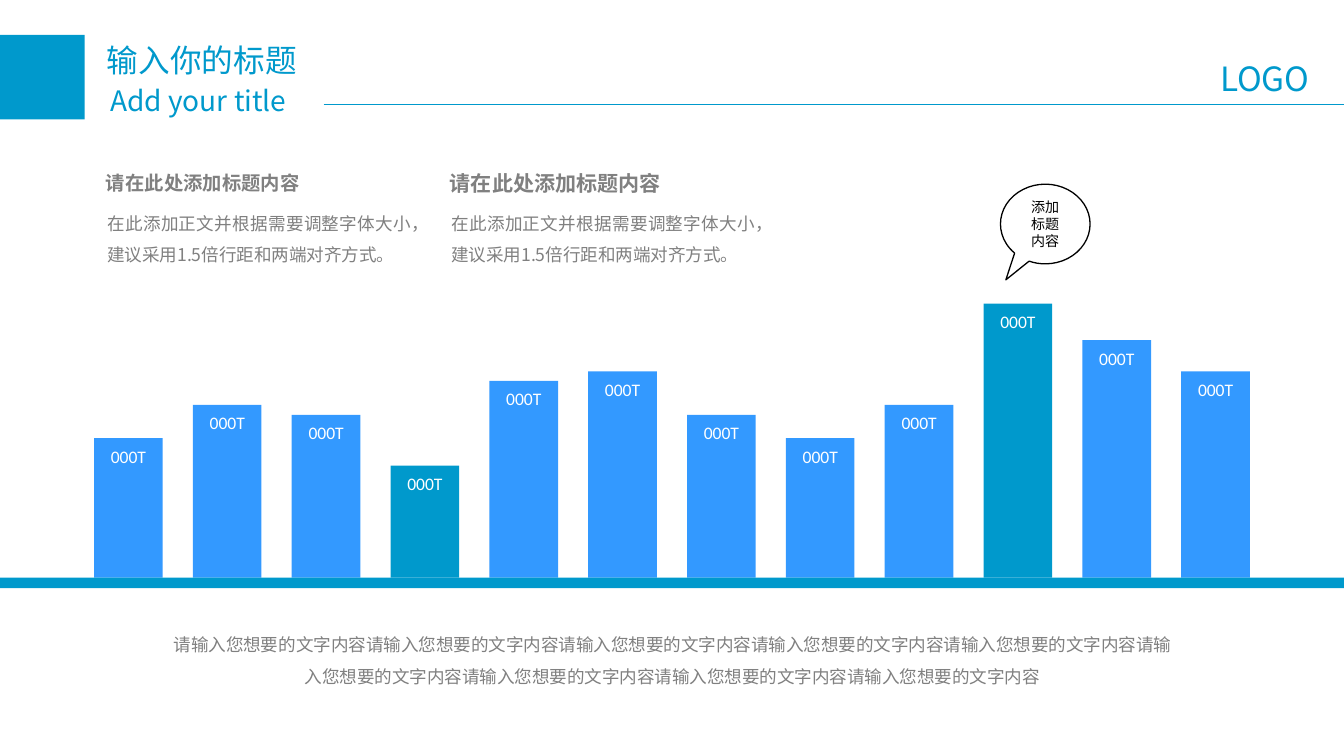
from lxml import etree
from pptx import Presentation
from pptx.dml.color import RGBColor
from pptx.enum import shapes, text
from pptx.oxml.ns import qn
from pptx.util import Cm, Pt

TEAL = RGBColor(0x00, 0x99, 0xCC)
BLUE = RGBColor(0x33, 0x99, 0xFF)
GREY = RGBColor(0x80, 0x80, 0x80)
WHITE = RGBColor(0xFF, 0xFF, 0xFF)
BLACK = RGBColor(0, 0, 0)
CJK = "Noto Sans CJK SC"
WIDTH, HEIGHT = 27, 15
BAR_HEIGHTS = [2.8, 3.47, 3.27, 2.25, 3.95, 4.14, 3.27, 2.8, 3.47, 5.5, 4.77, 4.14]
HIGHLIGHTS = (3, 9)
HEADING = "请在此处添加标题内容"
BODY = "在此添加正文并根据需要调整字体大小，建议采用1.5倍行距和两端对齐方式。"


def write(tf, words, size, color, font=CJK, bold=False, align=None,
          spacing=None, insets=(0.25, 0.13, 0.25, 0.13), wrap=True):
    tf.word_wrap = wrap
    tf.margin_left, tf.margin_top, tf.margin_right, tf.margin_bottom = map(Cm, insets)
    tf.text = words
    p = tf.paragraphs[0]
    p.alignment = align
    p.line_spacing = spacing
    r = p.runs[0]
    r.font.size = Pt(size)
    r.font.bold = bold
    r.font.name = font
    r.font.color.rgb = color
    etree.SubElement(r.font._element, qn("a:ea"), typeface=CJK)


def add_text(s, x, y, w, h, words, size, color, **style):
    tb = s.shapes.add_textbox(Cm(x), Cm(y), Cm(w), Cm(h))
    write(tb.text_frame, words, size, color, **style)


def add_block(s, x, y, w, h, color, kind=shapes.MSO_SHAPE.RECTANGLE):
    sp = s.shapes.add_shape(kind, Cm(x), Cm(y), Cm(w), Cm(h))
    sp.shadow.inherit = False
    sp.fill.solid()
    sp.fill.fore_color.rgb = color
    sp.line.fill.background()
    return sp


def add_header(s, x, y, w):
    add_block(s, x, y, 1.7, 1.7, TEAL)
    add_text(s, x + 1.9, y, 4.4, 1.02, "输入你的标题", 18, TEAL)
    add_text(s, x + 1.97, y + 0.84, 4.4, 0.94, "Add your title", 16, TEAL)
    line = s.shapes.add_connector(shapes.MSO_CONNECTOR.STRAIGHT,
                                  Cm(x + 6.5), Cm(y + 1.4), Cm(x + w), Cm(y + 1.4))
    line.line.color.rgb = TEAL
    line.line.width = Pt(0.75)
    etree.SubElement(line._element.spPr, qn("a:effectLst"))
    add_text(s, x + w - 2.74, y + 0.34, 2.44, 1.07, "LOGO", 19, TEAL, wrap=False)


def add_column(s, x, y, w, size, font):
    add_text(s, x, y, w, 0.7, HEADING, size, GREY, font=font, bold=True,
             insets=(0.2, 0.1, 0.2, 0.1))
    add_text(s, x + 0.23, y + 0.63, w - 0.25, 2.1, BODY, 10, GREY,
             align=text.PP_ALIGN.JUSTIFY, spacing=1.5, insets=(0, 0.1, 0, 0.1))


def add_bars(s, x, base, w, bar_width):
    pitch = (w - bar_width) / (len(BAR_HEIGHTS) - 1)
    for i, height in enumerate(BAR_HEIGHTS):
        color = TEAL if i in HIGHLIGHTS else BLUE
        bar = add_block(s, x + i * pitch, base - height, bar_width, height, color)
        bar.text_frame.vertical_anchor = text.MSO_ANCHOR.TOP
        write(bar.text_frame, "000T", 10, WHITE, font="Calibri",
              align=text.PP_ALIGN.CENTER, insets=(0, 0.15, 0, 0.1))
    add_block(s, 0, base, WIDTH, 0.21, TEAL)


def add_callout(s, x, y, w, h):
    sp = add_block(s, x, y, w, h, WHITE, shapes.MSO_SHAPE.OVAL_CALLOUT)
    sp.adjustments[0], sp.adjustments[1] = -0.44, 0.7
    sp.line.color.rgb = BLACK
    sp.line.width = Pt(0.75)
    sp.text_frame.vertical_anchor = text.MSO_ANCHOR.MIDDLE
    write(sp.text_frame, "添加标题内容", 8, BLACK, font="Arial",
          align=text.PP_ALIGN.CENTER)


def add_summary(s, x, y, w, h):
    add_text(s, x, y, w, h, "请输入您想要的文字内容" * 9, 10, GREY, font="Arial",
             align=text.PP_ALIGN.CENTER, spacing=1.5, insets=(0, 0.1, 0, 0.1))


def main():
    prs = Presentation()
    prs.slide_width, prs.slide_height = Cm(WIDTH), Cm(HEIGHT)
    s = prs.slides.add_slide(prs.slide_layouts[6])
    add_header(s, 0, 0.7, WIDTH)
    add_bars(s, 1.89, 11.6, 23.22, 1.38)
    add_summary(s, 3.35, 12.42, 20.3, 1.48)
    add_column(s, 1.93, 3.33, 6.35, 11, CJK)
    add_column(s, 8.84, 3.33, 6.35, 12, "Arial")
    add_callout(s, 20.1, 3.7, 1.8, 1.6)
    prs.save("out.pptx")


if __name__ == "__main__":
    main()
